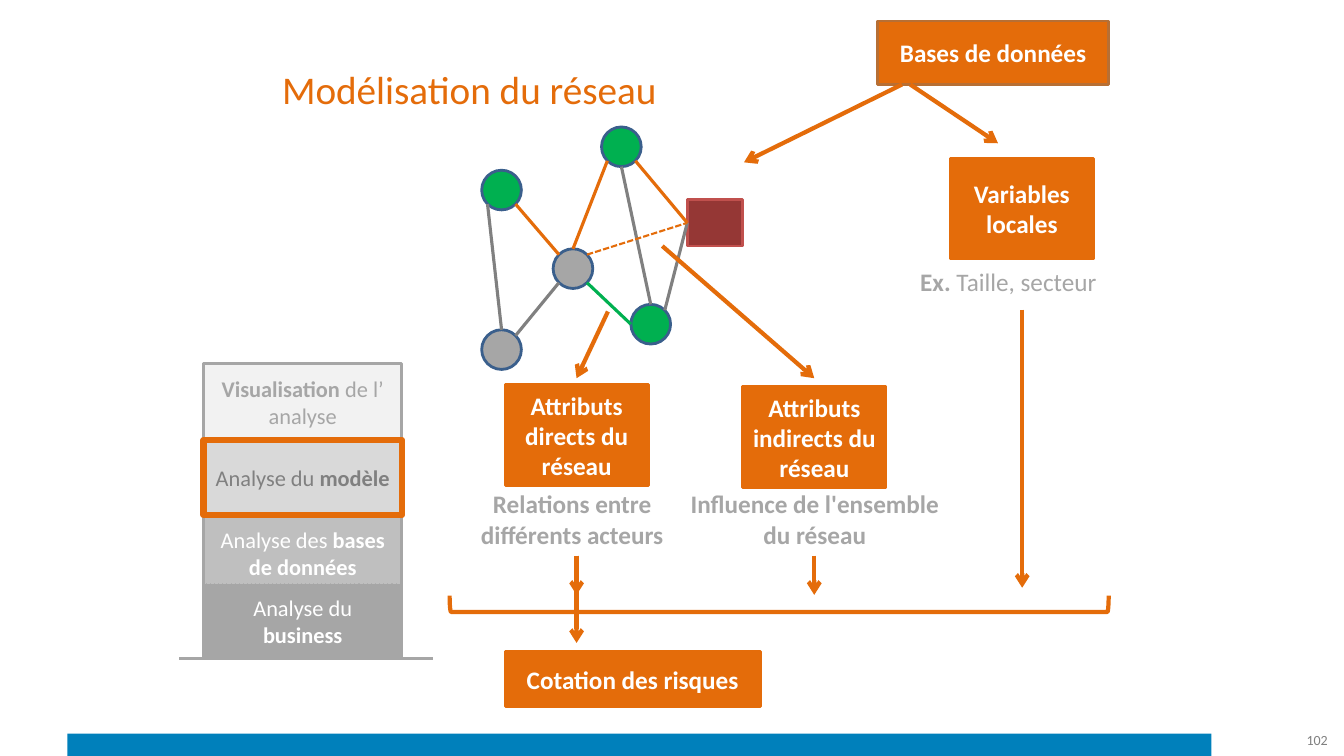
from math import cos, radians, sin

from lxml import etree
from pptx import Presentation
from pptx.dml.color import RGBColor
from pptx.enum.dml import MSO_LINE
from pptx.enum.shapes import MSO_CONNECTOR, MSO_SHAPE
from pptx.enum.text import MSO_ANCHOR, PP_ALIGN
from pptx.oxml.ns import qn
from pptx.util import Cm, Pt

RECT, OVAL, BRACE = MSO_SHAPE.RECTANGLE, MSO_SHAPE.OVAL, MSO_SHAPE.RIGHT_BRACKET
LEFT, MID, RIGHT = PP_ALIGN.LEFT, PP_ALIGN.CENTER, PP_ALIGN.RIGHT
TOP, CENTRE = MSO_ANCHOR.TOP, MSO_ANCHOR.MIDDLE
DOTS, LINE = MSO_LINE.SQUARE_DOT, MSO_CONNECTOR.STRAIGHT
FONT = "Calibri"
HEX = {
    "orange": "E46C0A", "brown": "B76F34", "green": "00B050", "navy": "3A5F8C",
    "blue": "0080BB", "wine": "953735", "red": "C0504D", "sand": "C4BD97",
    "white": "FFFFFF", "mist": "F2F2F2", "pale": "D9D9D9", "light": "BFBFBF",
    "grey": "A6A6A6", "dark": "808080",
}


def tint(name):
    return RGBColor.from_string(HEX[name])


def write(shape, *runs, size=18, color="white", align=MID, anchor=CENTRE,
          wrap=True, pad=0.25):
    """Fill a shape with (text, bold) runs."""
    frame = shape.text_frame
    frame.word_wrap = wrap
    frame.vertical_anchor = anchor
    frame.margin_left = frame.margin_right = Cm(pad)
    para = frame.paragraphs[0]
    para.alignment = align
    for text, bold in runs:
        run = para.add_run()
        run.text = text
        font = run.font
        font.name, font.size, font.bold = FONT, Pt(size), bold
        font.color.rgb = tint(color)


def label(slide, x, y, w, h, *runs, **style):
    write(slide.shapes.add_textbox(Cm(x), Cm(y), Cm(w), Cm(h)), *runs, **style)


def block(slide, x, y, w, h, fill=None, edge=None, width=2, dash=None, kind=RECT):
    shape = slide.shapes.add_shape(kind, Cm(x), Cm(y), Cm(w), Cm(h))
    shape.shadow.inherit = False
    if fill:
        shape.fill.solid()
        shape.fill.fore_color.rgb = tint(fill)
    else:
        shape.fill.background()
    if edge:
        shape.line.color.rgb = tint(edge)
        shape.line.width = Pt(width)
        shape.line.dash_style = dash
    else:
        shape.line.fill.background()
    return shape


def link(slide, start, end, color="orange", width=2.25, dash=None, head=False):
    wire = slide.shapes.add_connector(LINE, *(Cm(v) for v in (*start, *end)))
    etree.SubElement(wire._element.spPr, qn("a:effectLst"))
    wire.line.color.rgb = tint(color)
    wire.line.width = Pt(width)
    wire.line.dash_style = dash
    if head:
        tip = etree.SubElement(wire.line._get_or_add_ln(), qn("a:tailEnd"))
        tip.set("type", "arrow")
    return wire


def arrow(slide, start, end):
    link(slide, start, end, width=3, head=True)


def card(slide, x, y, w, h, text, edge="orange"):
    write(block(slide, x, y, w, h, "orange", edge), (text, True), pad=0.2)


def graph(slide, x, y):
    """Network of actors; sites count eighths of a turn leftwards from the top."""
    size = 1.0
    nodes = {
        "A": (0, 1.09, "green"), "B": (3.02, 0, "green"), "C": (3.76, 4.47, "green"),
        "D": (0, 5.11, "grey"), "E": (1.8, 3.07, "grey"),
    }
    for left, top, fill in nodes.values():
        block(slide, x + left, y + top, size, size, fill, "navy", kind=OVAL)

    def site(name, step):
        left, top, _ = nodes[name]
        turn = radians(45 * step)
        return (x + left + size / 2 * (1 - sin(turn)),
                y + top + size / 2 * (1 - cos(turn)))

    for one, first, two, last, color in (
        ("B", 4, "C", 0, "dark"), ("B", 3, "E", 0, "orange"),
        ("E", 5, "C", 2, "green"), ("E", 3, "D", 7, "dark"),
        ("E", 1, "A", 5, "orange"), ("A", 3, "D", 0, "dark"),
    ):
        link(slide, site(one, first), site(two, last), color)

    hub = block(slide, x + 5.18, y + 1.83, 1.4, 1.17, "wine", "red")
    for name, step, color, width, dash in (
        ("B", 5, "orange", 2.25, None), ("C", 7, "dark", 2.25, None),
        ("E", 7, "orange", 1.5, DOTS),
    ):
        spot = site(name, step)
        link(slide, spot, spot, color, width, dash).end_connect(hub, 1)


def base(slide, x, y):
    """Databases and the local variables drawn from them."""
    card(slide, x + 3.37, y, 5.82, 1.6, "Bases de données", "brown")
    arrow(slide, (x + 3.98, y + 1.6), (x, y + 3.56))
    arrow(slide, (x + 4.19, y + 1.6), (x + 6.4, y + 3.08))
    card(slide, x + 5.2, y + 3.46, 3.61, 2.54, "Variables locales")
    label(slide, x + 4.19, y + 6.05, 5, 1.02, ("Ex. ", True), ("Taille, secteur", False),
          color="grey", align=LEFT, anchor=TOP, wrap=False)
    arrow(slide, (x + 7.01, y + 7.27), (x + 7.01, y + 14.28))


def traits(slide, x, y):
    """Network attributes, gathered by a bracket into the risk rating."""
    for mid, start, top, name, note, left, wide in (
        (3.2, (3.99, 1.65), 3.5, "Attributs directs du réseau",
         "Relations entre différents acteurs", 0.46, 5.26),
        (9.19, (5.36, 0), 3.55, "Attributs indirects du réseau",
         "Influence de l'ensemble du réseau", 5.79, 6.83),
    ):
        arrow(slide, (x + start[0], y + start[1]), (x + mid, y + 3.33))
        card(slide, x + mid - 1.8, y + top, 3.61, 2.54, name)
        label(slide, x + left, y + 5.99, wide, 1.8, (note, True),
              color="grey", anchor=TOP)
        arrow(slide, (x + mid, y + 7.8), (x + mid, y + 8.79))
    deep, wide = 0.41, 16.61
    brace = block(slide, x + (wide - deep) / 2, y + 8.81 - (wide - deep) / 2,
                  deep, wide, edge="orange", width=3, kind=BRACE)
    brace.rotation = 90
    arrow(slide, (x + 3.2, y + 7.8), (x + 3.2, y + 10))
    card(slide, x + 1.4, y + 10.21, 6.43, 1.4, "Cotation des risques")


def stack(slide, x, y, w, h):
    """Layers of the analysis, with the current one framed."""
    link(slide, (x - 0.61, y + h - 0.02), (x + w + 0.79, y + h - 0.02), "grey")
    tall = 1.89
    for top, fill, edge, color, runs in (
        (0.02, "mist", "sand", "grey", (("Visualisation ", True), ("de l’ analyse", False))),
        (1.92, "pale", "sand", "dark", (("Analyse du ", False), ("modèle", True))),
        (3.82, "light", "sand", "white", (("Analyse des ", False), ("bases de données", True))),
        (5.53, "grey", "light", "white", (("Analyse du ", False), ("business", True))),
    ):
        layer = block(slide, x, y + top, w, tall, fill, edge, 0.75, DOTS)
        write(layer, *runs, size=16, color=color)
    block(slide, x, y, w, h, edge="grey")
    block(slide, x, y + 1.92, w, tall, edge="orange", width=4.5)


def frame(slide):
    """Title, footer band and page number."""
    block(slide, 1.7, 18.49, 28.83, 0.64, "blue")
    label(slide, 6.86, 1.52, 10.06, 1.45, ("Modélisation du réseau", False),
          size=28, color="orange", align=LEFT, anchor=TOP, wrap=False)
    label(slide, 30.94, 18.14, 2.77, 1.02, ("102", False),
          size=10, color="dark", align=RIGHT)


def main():
    deck = Presentation()
    deck.slide_width, deck.slide_height = Cm(33.87), Cm(19.05)
    slide = deck.slides.add_slide(deck.slide_layouts[6])
    frame(slide)
    graph(slide, 12.14, 3.2)
    traits(slide, 11.33, 6.2)
    base(slide, 18.75, 0.53)
    stack(slide, 5.13, 9.17, 5, 7.44)
    deck.save("out.pptx")


if __name__ == "__main__":
    main()
